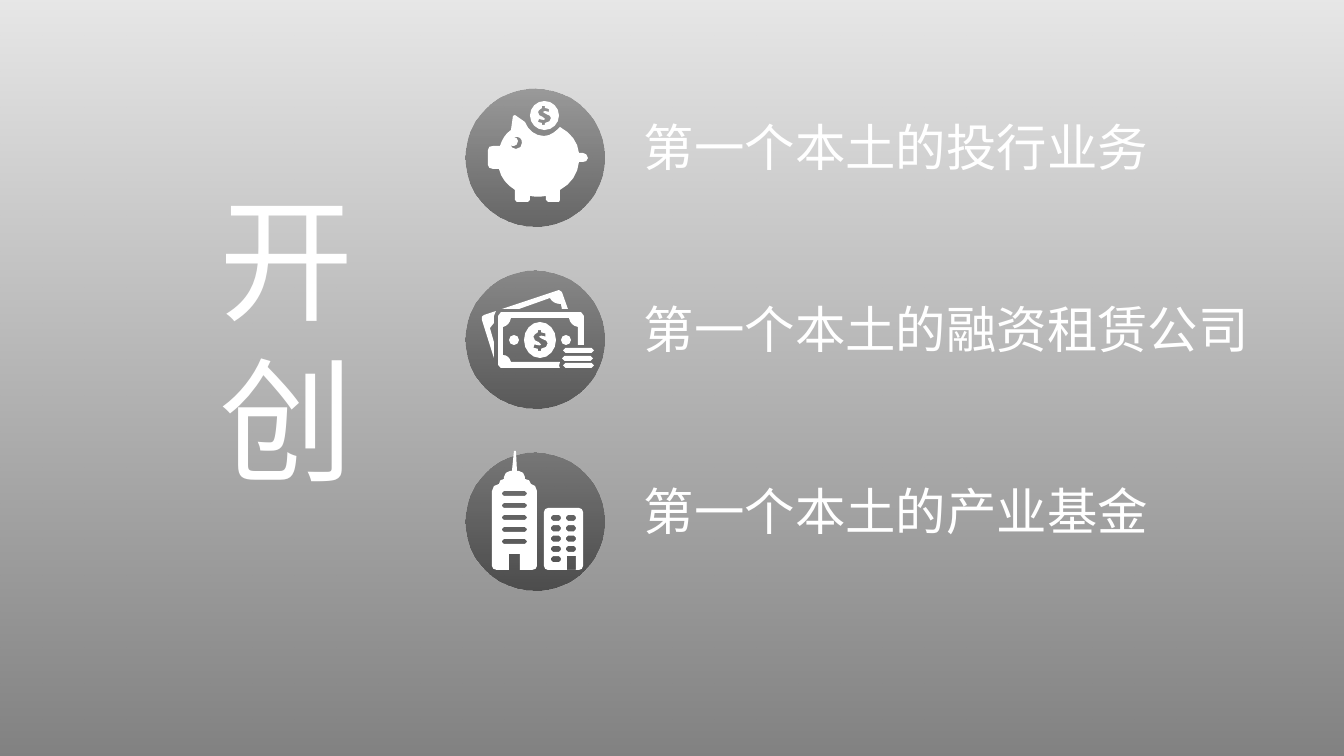
from lxml.etree import SubElement
from pptx import Presentation
from pptx.dml.color import RGBColor
from pptx.enum.shapes import MSO_SHAPE as Shape
from pptx.oxml.ns import qn
from pptx.util import Emu, Pt

PX = 12192000 / 1344
FONT = "Noto Sans CJK JP"
COLORS = {"shade": "000000", "white": "FFFFFF"}
TITLE = "开创"
LABELS = ["第一个本土的投行业务", "第一个本土的融资租赁公司", "第一个本土的产业基金"]
LABEL_WIDTHS = [529, 625, 529]
ROW_STEP = 182
LABEL_LEFT, LABEL_TOP, LABEL_HEIGHT = 634, 111, 72
CIRCLE_LEFT, CIRCLE_TOP, CIRCLE_SIZE = 466, 89, 138

PIG = [
    (583, 153), (579, 153), (578, 142, 571, 133, 560, 127),
    (556, 131, 551, 136, 544, 136), (535, 136, 528, 130, 525, 122),
    (515, 115), (513, 113, 513, 114, 513, 116), (511, 130),
    (505, 134, 502, 140, 500, 146), (493, 146), (490, 146, 488, 147, 488, 150),
    (488, 165), (488, 167, 490, 169, 493, 169), (499, 169),
    (501, 178, 507, 185, 515, 190), (515, 200), (517, 202),
    (528, 202), (530, 200), (530, 196), (535, 197, 541, 197, 546, 196),
    (546, 200), (548, 202), (559, 202), (560, 200), (560, 190),
    (571, 184, 578, 174, 579, 162), (583, 162),
    (585, 162, 588, 161, 588, 158), (588, 155, 585, 153, 583, 153)]
PIG_EYE = [
    (516, 149), (513, 149, 511, 147, 510, 144), (511, 146, 512, 146, 514, 146),
    (516, 146, 518, 144, 518, 141), (518, 139, 516, 137, 514, 137),
    (520, 136, 522, 139, 522, 143), (522, 146, 520, 149, 516, 149)]
DOLLAR = [
    (1, 8), (1, 10), (-2, 10), (-2, 8), (-6, 7), (-5, 4),
    (-4, 4, -2, 5, 0, 5), (1, 4), (-1, 2),
    (-4, 1, -6, 0, -6, -3), (-6, -4, -4, -6, -2, -7), (-2, -9), (1, -9),
    (1, -7), (5, -6), (5, -3), (4, -3, 3, -4, 1, -4),
    (-1, -3), (2, -1), (5, 0, 7, 1, 7, 3), (7, 6, 5, 7, 1, 8)]
BACK_BILL_TOP = [
    (562, 292), (559, 290), (502, 309), (519, 309),
    (550, 298), (552, 302, 556, 304, 561, 304), (562, 309), (568, 309)]
BACK_BILL_SIDE = [
    (482, 320), (494, 358), (494, 342), (490, 328),
    (494, 323), (494, 316), (496, 311), (484, 315),
    (482, 315, 481, 318, 482, 320)]
BILL_FRAME = [
    (560, 368), (501, 368), (498, 365), (498, 316), (501, 312), (581, 312),
    (584, 316), (584, 345), (578, 345), (578, 327),
    (573, 326, 570, 323, 569, 318), (511, 318), (510, 323, 507, 326, 503, 327),
    (503, 355), (507, 355, 510, 358, 511, 362), (560, 362), (559, 366)]
TOWER = [
    (531, 484), (531, 481, 528, 479, 525, 479), (525, 477),
    (525, 474, 522, 471, 519, 471), (517, 471), (516, 451),
    (516, 448, 514, 448, 514, 451), (512, 471), (510, 471),
    (507, 471, 504, 474, 504, 477), (504, 479), (501, 479, 499, 481, 499, 484),
    (495, 484, 492, 487, 492, 491), (492, 566), (492, 568, 494, 570, 497, 570),
    (509, 570), (509, 554), (520, 554), (520, 570), (532, 570),
    (535, 570, 537, 568, 537, 566), (537, 491), (537, 487, 534, 484, 531, 484)]


def px(value):
    return Emu(round(value * PX))


def rounded(left, top, width, height, rx, ry=None):
    ry = rx if ry is None else ry
    right, bottom, cx, cy = left + width, top + height, rx * 0.45, ry * 0.45
    return [
        (left + rx, top), (right - rx, top),
        (right - cx, top, right, top + cy, right, top + ry), (right, bottom - ry),
        (right, bottom - cy, right - cx, bottom, right - rx, bottom),
        (left + rx, bottom),
        (left + cx, bottom, left, bottom - cy, left, bottom - ry), (left, top + ry),
        (left, top + cy, left + cx, top, left + rx, top)]


def disc(left, top, width, height):
    return rounded(left, top, width, height, width / 2, height / 2)


def dollar(center_x, center_y, scale):
    center = (center_x, center_y)
    return [tuple(center[i % 2] + value * scale for i, value in enumerate(entry))
            for entry in DOLLAR]


def flatten(outline):
    points = []
    for entry in outline:
        if len(entry) == 2:
            points.append(entry)
            continue
        knots = [points[-1], entry[:2], entry[2:4], entry[4:]]
        span = max(abs(end - start) for start, end in zip(knots[0], knots[3]))
        steps = 1 if span < 4 else 2 if span < 8 else 4
        for step in range(1, steps + 1):
            t = step / steps
            weights = [(1 - t) ** 3, 3 * t * (1 - t) ** 2, 3 * t * t * (1 - t), t ** 3]
            points.append(tuple(sum(w * knot[axis] for w, knot in zip(weights, knots))
                                for axis in (0, 1)))
    return list(dict.fromkeys((px(x), px(y)) for x, y in points))


def add_icon_part(shapes, outlines):
    first, *others = [flatten(outline) for outline in outlines]
    builder = shapes.build_freeform(*first[0], scale=1.0)
    builder.add_line_segments(first[1:], close=True)
    for points in others:
        builder.move_to(*points[0])
        builder.add_line_segments(points[1:], close=True)
    shape = builder.convert_to_shape()
    shape.shadow.inherit = False
    shape.fill.solid()
    shape.fill.fore_color.rgb = RGBColor.from_string(COLORS["white"])
    shape.line.fill.background()


def add_shaded(shapes, kind, box, opacities):
    shape = shapes.add_shape(kind, *map(px, box))
    shape.shadow.inherit = False
    shape.line.fill.background()
    shape.fill.gradient()
    shape.fill.gradient_angle = 270
    for stop, position in zip(shape.fill.gradient_stops, (0, 1)):
        stop.position = position
        stop.color.rgb = RGBColor.from_string(COLORS["shade"])
    colors = list(shape.element.spPr.iter(qn("a:srgbClr")))
    for color, opacity in zip(colors, opacities):
        SubElement(color, qn("a:alpha")).set("val", str(opacity * 1000))


def add_text(shapes, text, box, size, wrap):
    frame = shapes.add_textbox(*map(px, box)).text_frame
    frame.word_wrap = wrap
    run = frame.paragraphs[0].add_run()
    run.text = text
    run.font.size = Pt(size)
    run.font.color.rgb = RGBColor.from_string(COLORS["white"])
    run.font.name = FONT
    SubElement(run.font._element, qn("a:ea")).set("typeface", FONT)


tower_windows = [rounded(502, 491 + 12 * row, 25, 5, 2) for row in range(5)]
office_windows = [rounded(551 + 15 * column, 515 + 10.3 * row, 10, 6, 2)
                  for column, rows in enumerate((5, 4)) for row in range(rows)]
office_door = [(567, 570), (567, 556), (576, 556), (576, 570)]
coin_stack = [[rounded(left, top, 31, 5, 2.5)]
              for left, top in ((563, 348), (562, 356), (563, 363))]
ICONS = [
    [[PIG, PIG_EYE], [disc(530, 101, 29, 29), dollar(544, 115, 1)]],
    [[BACK_BILL_TOP, BACK_BILL_SIDE],
     [BILL_FRAME, disc(509, 335, 10, 10), disc(561, 335, 10, 10),
      disc(524, 322, 32, 36), dollar(540, 340, 1.1)], *coin_stack],
    [[rounded(544, 508, 39, 62, 4), office_door, *office_windows],
     [TOWER, *tower_windows]],
]

presentation = Presentation()
presentation.slide_width, presentation.slide_height = px(1344), px(756)
slide = presentation.slides.add_slide(presentation.slide_layouts[6])
add_shaded(slide.shapes, Shape.RECTANGLE, (0, 0, 1344, 756), (10, 50))
add_text(slide.shapes, TITLE, (210, 171, 226, 336), 96, True)
for row, (label, width, icon) in enumerate(zip(LABELS, LABEL_WIDTHS, ICONS)):
    shapes = slide.shapes.add_group_shape().shapes
    offset = row * ROW_STEP
    add_text(shapes, label, (LABEL_LEFT, LABEL_TOP + offset, width, LABEL_HEIGHT), 36, False)
    add_shaded(shapes, Shape.OVAL,
               (CIRCLE_LEFT, CIRCLE_TOP + offset, CIRCLE_SIZE, CIRCLE_SIZE), (30, 50))
    for outlines in icon:
        add_icon_part(shapes, outlines)
presentation.save("out.pptx")
